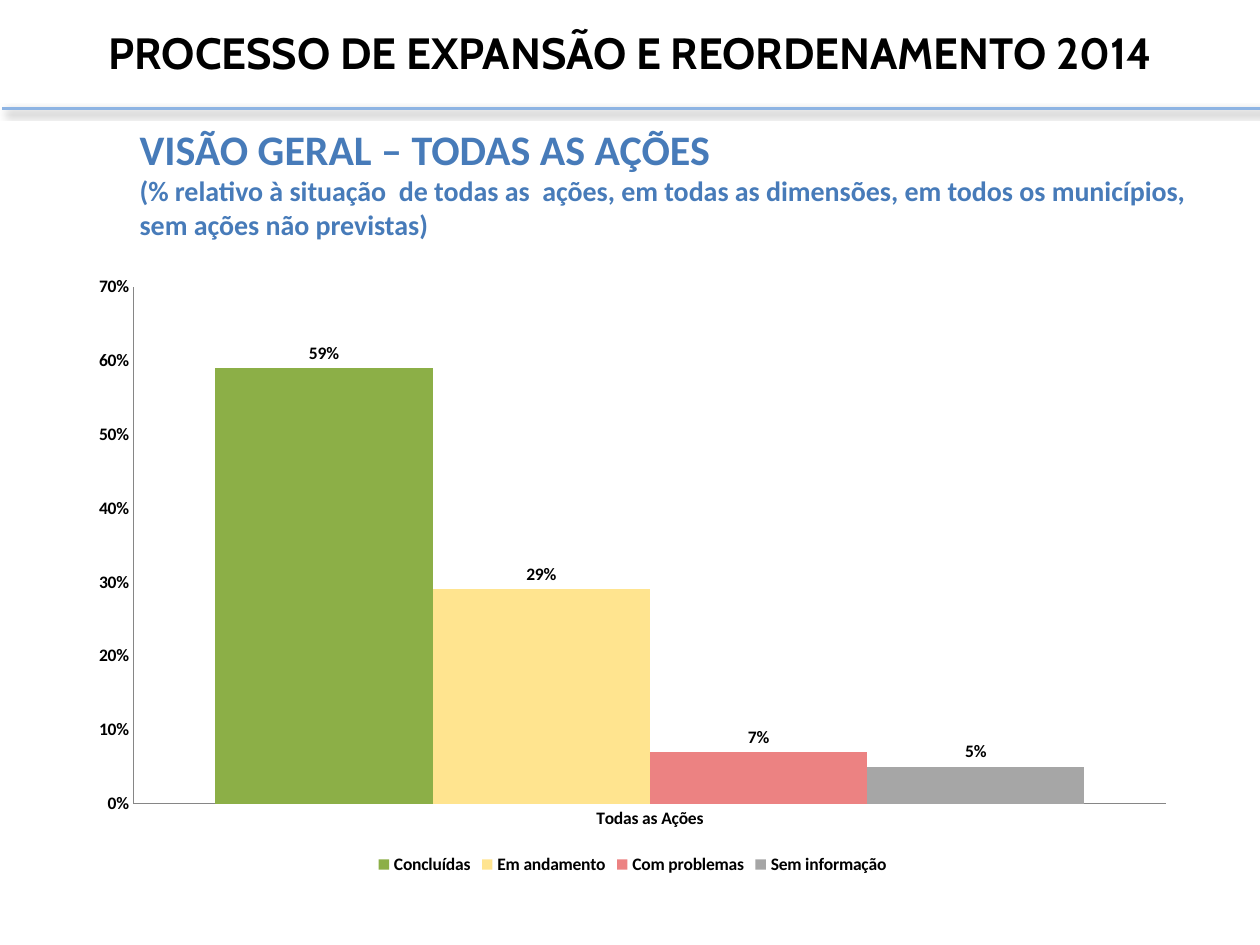
from lxml import etree
from pptx import Presentation
from pptx.chart.data import CategoryChartData
from pptx.dml.color import RGBColor
from pptx.enum.chart import XL_CHART_TYPE, XL_LABEL_POSITION, XL_LEGEND_POSITION, XL_TICK_MARK
from pptx.enum.shapes import MSO_CONNECTOR
from pptx.enum.text import MSO_ANCHOR, PP_ALIGN
from pptx.oxml.ns import qn
from pptx.util import Inches, Pt

BLACK = RGBColor(0x00, 0x00, 0x00)
BLUE = RGBColor(0x47, 0x7B, 0xB9)
LIGHT_BLUE = RGBColor(0x8E, 0xB4, 0xE3)
AXIS_GRAY = RGBColor(0x86, 0x86, 0x86)
GREEN = RGBColor(0x8C, 0xAF, 0x47)
YELLOW = RGBColor(0xFF, 0xE4, 0x8F)
RED = RGBColor(0xEC, 0x82, 0x82)
GRAY = RGBColor(0xA6, 0xA6, 0xA6)

CLUSTERED = XL_CHART_TYPE.COLUMN_CLUSTERED
STRAIGHT = MSO_CONNECTOR.STRAIGHT
OUTSIDE_END = XL_LABEL_POSITION.OUTSIDE_END
BOTTOM = XL_LEGEND_POSITION.BOTTOM
NO_TICK = XL_TICK_MARK.NONE
MIDDLE = MSO_ANCHOR.MIDDLE
CENTER = PP_ALIGN.CENTER
LEFT = PP_ALIGN.LEFT

TITLE_ONLY = 5
PERCENT = "0%"


def format_font(font, size, color=BLACK, name="Calibri", bold=True):
    font.size = Pt(size)
    font.bold = bold
    font.color.rgb = color
    font.name = name


def write(p, text, size, align=LEFT, **font):
    p.alignment = align
    r = p.add_run()
    r.text = text
    format_font(r.font, size, **font)
    return r


def shadow_effect(blur, dist, angle, alpha):
    """Return an a:effectLst with a black outer shadow; blur and dist in points."""
    effects = etree.Element(qn("a:effectLst"))
    shadow = etree.SubElement(
        effects, qn("a:outerShdw"), blurRad=str(Pt(blur)), dist=str(Pt(dist)),
        dir=str(angle * 60000), algn="tl", rotWithShape="0")
    color = etree.SubElement(shadow, qn("a:srgbClr"), val=str(BLACK))
    etree.SubElement(color, qn("a:alpha"), val=str(alpha * 1000))
    return effects


class SlideBuilder:
    def __init__(self, prs):
        self.s = prs.slides.add_slide(prs.slide_layouts[TITLE_ONLY])

    def title(self, text, x, y, w, h):
        sp = self.s.shapes.title
        sp.left, sp.top, sp.width, sp.height = (Inches(v) for v in (x, y, w, h))
        tf = sp.text_frame
        tf.vertical_anchor = MIDDLE
        r = write(tf.paragraphs[0], text, 25, align=CENTER, name="Cabin")
        fill = r.font._element.find(qn("a:solidFill"))
        fill.addnext(shadow_effect(blur=4, dist=3, angle=45, alpha=40))

    def rule(self, x1, x2, y):
        line = self.s.shapes.add_connector(
            STRAIGHT, Inches(x1), Inches(y), Inches(x2), Inches(y))
        line.line.color.rgb = LIGHT_BLUE
        line.line.width = Pt(1.5)
        line._element.spPr.append(shadow_effect(blur=4, dist=3, angle=45, alpha=40))

    def text(self, lines, x, y, w, h):
        """Add a text box; lines holds (text, size) pairs."""
        tf = self.s.shapes.add_textbox(Inches(x), Inches(y), Inches(w), Inches(h)).text_frame
        tf.word_wrap = True
        for i, (text, size) in enumerate(lines):
            p = tf.add_paragraph() if i else tf.paragraphs[0]
            write(p, text, size, color=BLUE)

    def column_chart(self, category, series, x, y, w, h):
        """Add a clustered chart; series holds (name, value, color) triples."""
        data = CategoryChartData(number_format=PERCENT)
        data.categories = [category]
        for name, value, _ in series:
            data.add_series(name, [value])
        chart = self.s.shapes.add_chart(
            CLUSTERED, Inches(x), Inches(y), Inches(w), Inches(h), data).chart
        format_font(chart.font, 10)
        chart.has_title = False
        chart.has_legend = True
        chart.legend.position = BOTTOM
        chart.legend.include_in_layout = False

        for axis in (chart.category_axis, chart.value_axis):
            axis.major_tick_mark = axis.minor_tick_mark = NO_TICK
            axis.has_major_gridlines = False
            axis.format.line.color.rgb = AXIS_GRAY
            axis.format.line.width = Pt(0.75)
        values = chart.value_axis
        values.minimum_scale, values.maximum_scale, values.major_unit = 0, 0.7, 0.1
        values.tick_labels.number_format = PERCENT
        values.tick_labels.number_format_is_linked = False

        plot = chart.plots[0]
        plot.gap_width = 75
        plot.overlap = 0
        plot.vary_by_categories = False
        for bars, (_, _, color) in zip(plot.series, series):
            bars.format.fill.solid()
            bars.format.fill.fore_color.rgb = color
            labels = bars.data_labels
            labels.show_value = True
            labels.number_format = PERCENT
            labels.number_format_is_linked = False
            labels.position = OUTSIDE_END


def main():
    prs = Presentation()
    prs.slide_width, prs.slide_height = Inches(10), Inches(7.5)
    slide = SlideBuilder(prs)
    slide.title("PROCESSO DE EXPANSÃO E REORDENAMENTO 2014", 0, 0, 10, 0.83)
    slide.rule(0.02, 10.03, 0.86)
    slide.column_chart("Todas as Ações", [
        ("Concluídas", 0.59, GREEN),
        ("Em andamento", 0.29, YELLOW),
        ("Com problemas", 0.07, RED),
        ("Sem informação", 0.05, GRAY),
    ], 0.61, 2.1, 8.82, 4.88)
    slide.text([
        ("VISÃO GERAL – TODAS AS AÇÕES", 24),
        ("(% relativo à situação  de todas as  ações, em todas as dimensões, "
         "em todos os municípios, sem ações não previstas)", 16),
    ], 1.01, 0.93, 8.87, 1.04)
    prs.save("out.pptx")


if __name__ == "__main__":
    main()
